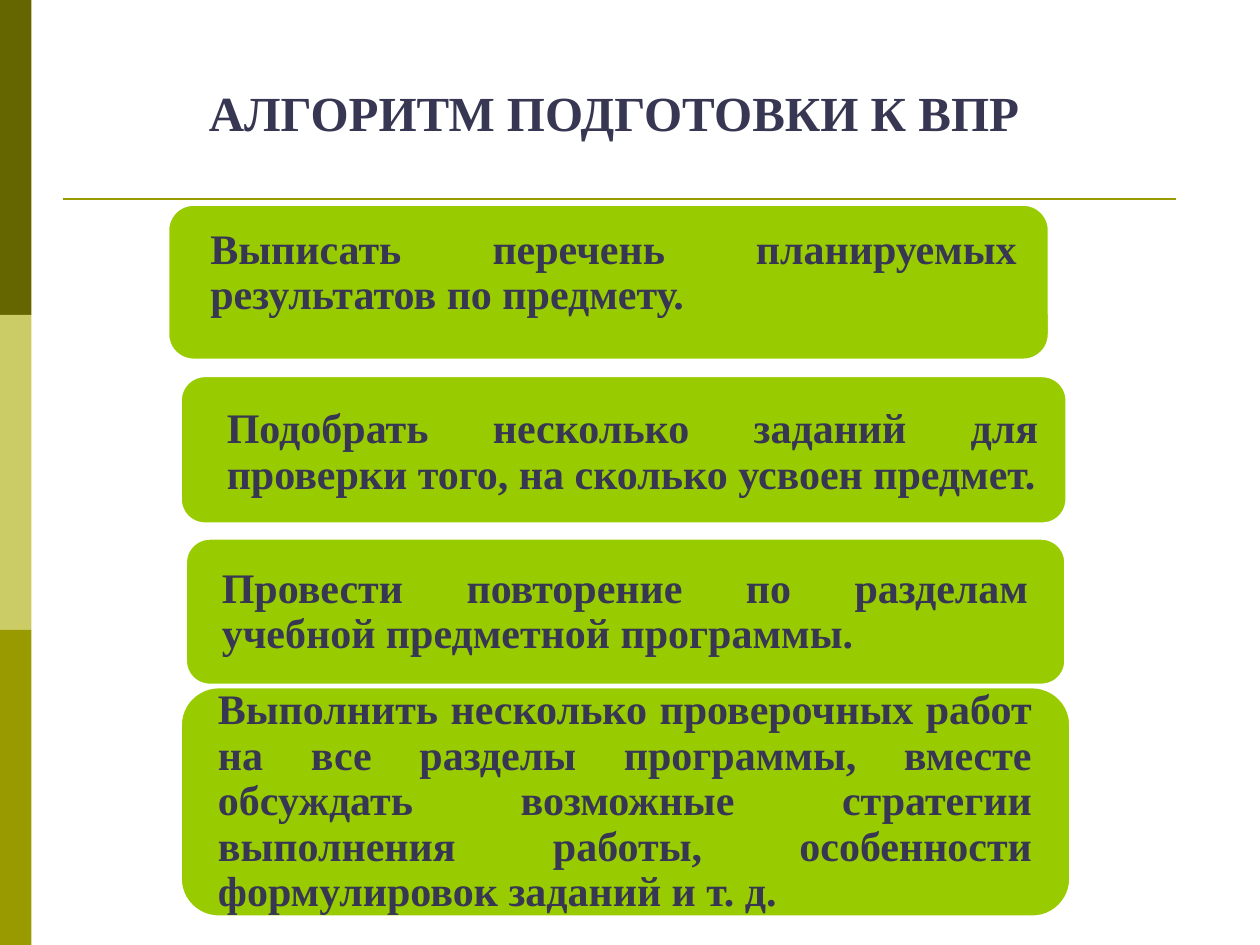
from lxml import etree
from pptx import Presentation
from pptx.dml.color import RGBColor
from pptx.enum import shapes, text
from pptx.oxml.ns import qn
from pptx.util import Inches, Pt

DARK_OLIVE = RGBColor(0x66, 0x66, 0x00)
PALE_OLIVE = RGBColor(0xCC, 0xCC, 0x66)
OLIVE = RGBColor(0x99, 0x99, 0x00)
GREEN = RGBColor(0x99, 0xCC, 0x00)
WHITE = RGBColor(0xFF, 0xFF, 0xFF)
INK = RGBColor(0x37, 0x37, 0x53)


def add_block(parent, kind, box, fill):
    block = parent.add_shape(kind, *[Inches(v) for v in box])
    block.shadow.inherit = False
    block.fill.solid()
    block.fill.fore_color.rgb = fill
    block.line.fill.background()
    return block


def add_words(parent, box, words, size, anchor):
    frame = parent.add_textbox(*[Inches(v) for v in box]).text_frame
    frame.word_wrap = True
    frame.vertical_anchor = anchor
    frame.text = words
    font = frame.paragraphs[0].runs[0].font
    font.name = "Times New Roman"
    font.size = Pt(size)
    font.bold = True
    font.color.rgb = INK
    return frame


prs = Presentation()
prs.slide_width, prs.slide_height = Inches(10), Inches(7.5)
slide = prs.slides.add_slide(prs.slide_layouts[6])

# Side band in three equal parts
for i, colour in enumerate([DARK_OLIVE, PALE_OLIVE, OLIVE]):
    add_block(slide.shapes, shapes.MSO_SHAPE.RECTANGLE, (0, 2.5 * i, 0.25, 2.5), colour)

# Rule under the title
rule = slide.shapes.add_connector(
    shapes.MSO_CONNECTOR.STRAIGHT, Inches(0.5), Inches(1.58), Inches(9.33), Inches(1.58))
rule.line.color.rgb = OLIVE
rule.line.width = Pt(1.5)
etree.SubElement(rule._element.spPr, qn("a:effectLst"))

# Title
add_words(slide.shapes, (1.56, 0.28, 7.06, 0.89), "АЛГОРИТМ ПОДГОТОВКИ К ВПР",
          28, text.MSO_ANCHOR.BOTTOM)

# Steps: card box, text box, wording
steps = [
    ((1.33, 1.62, 7, 1.24), (1.43, 1.61, 6.88, 1.12),
     "Выписать перечень планируемых результатов по предмету."),
    ((1.43, 2.98, 7.04, 1.18), (1.56, 3.06, 6.92, 1.07),
     "Подобрать несколько заданий для проверки того, на сколько усвоен предмет."),
    ((1.47, 4.27, 6.99, 1.17), (1.52, 4.33, 6.88, 1.06),
     "Провести повторение по разделам учебной предметной программы."),
    ((1.43, 5.45, 7.07, 1.83), (1.49, 5.54, 6.94, 1.65),
     "Выполнить несколько проверочных работ на все разделы программы, вместе "
     "обсуждать возможные стратегии выполнения работы, особенности "
     "формулировок заданий и т. д."),
]
for card_box, words_box, words in steps:
    step = slide.shapes.add_group_shape().shapes
    card = add_block(step, shapes.MSO_SHAPE.ROUNDED_RECTANGLE, card_box, GREEN)
    card.line.color.rgb = WHITE
    card.line.width = Pt(2)
    frame = add_words(step, words_box, words, 24, text.MSO_ANCHOR.MIDDLE)
    frame.margin_left = frame.margin_right = Inches(0.24)
    frame.margin_top = frame.margin_bottom = 0
    frame.paragraphs[0].alignment = text.PP_ALIGN.JUSTIFY
    frame.paragraphs[0].line_spacing = 0.9

prs.save("out.pptx")
